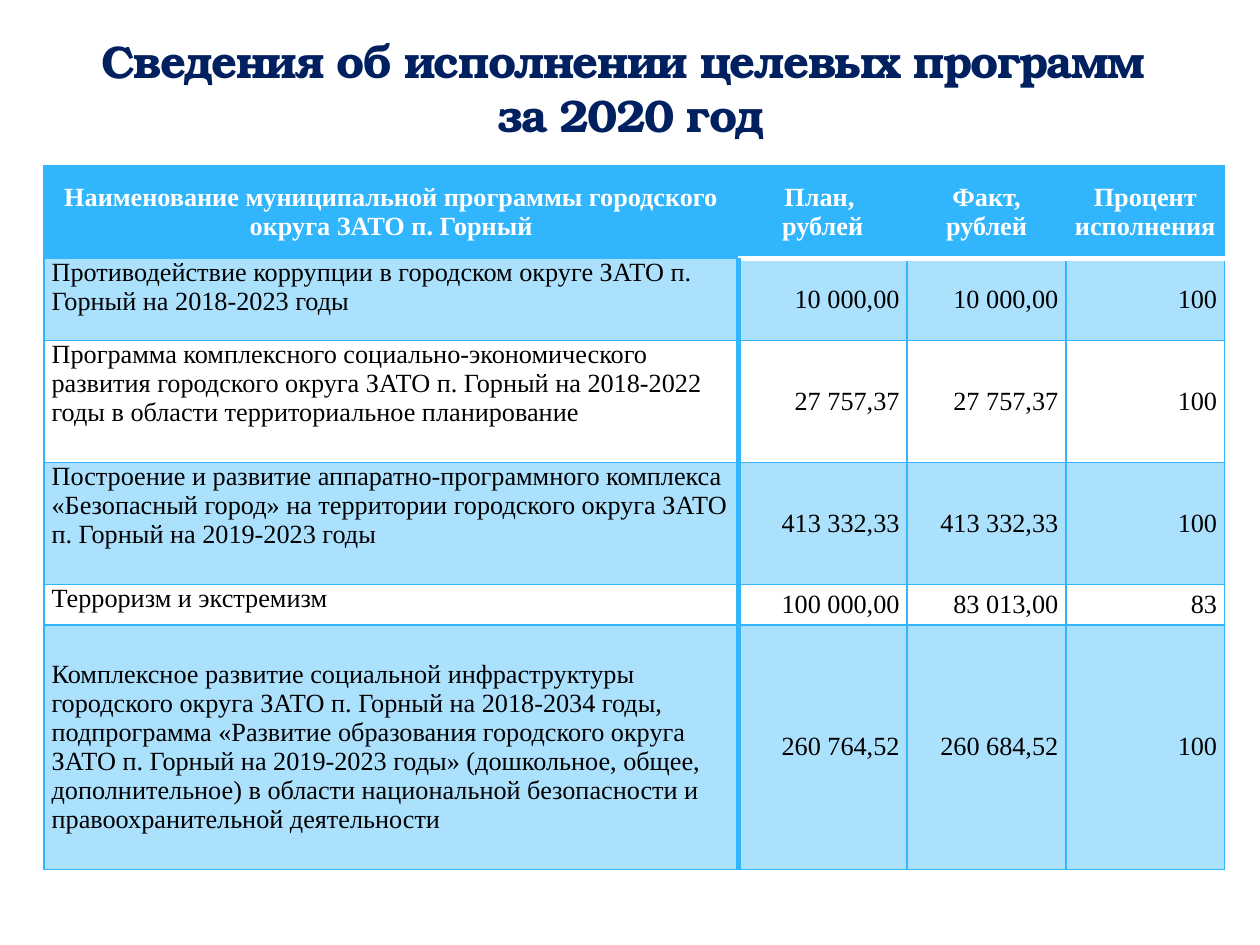
from pptx import Presentation
from pptx.util import Inches, Pt
from pptx.dml.color import RGBColor
from pptx.enum.text import PP_ALIGN, MSO_ANCHOR
from pptx.oxml.ns import qn
from lxml.etree import SubElement

HUES = {"navy": "002060", "blue": "31B6FD", "white": "FFFFFF", "black": "000000"}
WIDE, HIGH = Inches(10), Inches(7.5)

# Shares of the slide: left, top, width, height
TITLE = (0.028, 0.028, 0.945, 0.116)
GRID = (0.035, 0.175, 0.937, 0.745)
COLS = (5.51, 1.34, 1.26, 1.26)
ROWS = (0.74, 0.65, 0.97, 0.97, 0.32, 1.94)

HEAD = ("Наименование муниципальной программы городского округа ЗАТО п. Горный",
        "План, \nрублей", "Факт,\nрублей", "Процент исполнения")
BODY = (
    ("Противодействие коррупции в городском округе ЗАТО п. Горный на 2018-2023 годы",
     "10 000,00", "10 000,00", "100"),
    ("Программа комплексного социально-экономического развития городского округа "
     "ЗАТО п. Горный на 2018-2022 годы в области территориальное планирование",
     "27 757,37", "27 757,37", "100"),
    ("Построение и развитие аппаратно-программного комплекса «Безопасный город» "
     "на территории городского округа ЗАТО п. Горный на 2019-2023 годы",
     "413 332,33", "413 332,33", "100"),
    ("Терроризм и экстремизм", "100 000,00", "83 013,00", "83"),
    ("Комплексное развитие социальной инфраструктуры городского округа ЗАТО п. Горный "
     "на 2018-2034 годы, подпрограмма «Развитие образования городского округа ЗАТО "
     "п. Горный на 2019-2023 годы» (дошкольное, общее, дополнительное) в области "
     "национальной безопасности и правоохранительной деятельности",
     "260 764,52", "260 684,52", "100"),
)


def scale(box):
    return [int(part * side) for part, side in zip(box, (WIDE, HIGH) * 2)]


def assign(item, props):
    for name, value in props.items():
        setattr(item, name, value)


def write(frame, text, align, hue, **font):
    frame.text = text
    for para in frame.paragraphs:
        para.alignment = align
        for run in para.runs:
            assign(run.font, font)
            run.font.color.rgb = RGBColor.from_string(HUES[hue])


def paint(node, hue, alpha=None):
    fill = SubElement(node, qn("a:solidFill"))
    tint = SubElement(fill, qn("a:srgbClr"), val=HUES[hue])
    if alpha:
        SubElement(tint, qn("a:alpha"), val=str(alpha * 1000))


def edge(cell, **sides):
    # Borders come before the fill, in the order L, R, T, B
    props = cell._tc.get_or_add_tcPr()
    for side in "LRTB":
        hue, width = sides.get(side, ("blue", 1))
        line = SubElement(props, qn("a:ln" + side), w=str(Pt(width)))
        paint(line, hue)


def title(slide, box):
    frame = slide.shapes.add_textbox(*scale(box)).text_frame
    assign(frame, {"word_wrap": True, "vertical_anchor": MSO_ANCHOR.TOP})
    write(frame, "Сведения об исполнении целевых программ \vза 2020 год",
          PP_ALIGN.CENTER, "navy", name="TeX Gyre Bonum", size=Pt(26), bold=True)
    for run in frame.paragraphs[0].runs:
        run.font._element.set("spc", "-100")


def style(cell, row, col, text):
    top, first = row == 0, col == 0
    high = first and 0 < row < len(BODY)
    assign(cell, {"margin_left": Inches(0.06), "margin_right": Inches(0.06),
                  "margin_top": 0, "margin_bottom": 0,
                  "vertical_anchor": MSO_ANCHOR.TOP if high else MSO_ANCHOR.MIDDLE})
    align = PP_ALIGN.CENTER if top else PP_ALIGN.LEFT if first else PP_ALIGN.RIGHT
    write(cell.text_frame, text, align, "white" if top else "black",
          name="Times New Roman", size=Pt(15), bold=top)

    # White rule under the number heads, thick rule beside the names
    sides = {}
    if not first and row < 2:
        sides["B" if top else "T"] = ("white", 3)
    if not top and col < 2:
        sides["R" if first else "L"] = ("blue", 3)
    edge(cell, **sides)

    # Solid head, then tinted and clear rows in turn
    if top or row % 2:
        paint(cell._tc.tcPr, "blue", None if top else 40)
    else:
        cell.fill.background()


def grid(slide, box):
    left, top, width, height = scale(box)
    table = slide.shapes.add_table(len(ROWS), len(COLS), left, top, width, height).table
    assign(table, {"first_row": False, "horz_banding": False})
    for col, share in zip(table.columns, COLS):
        col.width = int(width * share / sum(COLS))
    for row, share in zip(table.rows, ROWS):
        row.height = int(height * share / sum(ROWS))
    for r, texts in enumerate((HEAD, *BODY)):
        for c, text in enumerate(texts):
            style(table.cell(r, c), r, c, text)


def main():
    deck = Presentation()
    assign(deck, {"slide_width": WIDE, "slide_height": HIGH})
    slide = deck.slides.add_slide(deck.slide_layouts[6])
    title(slide, TITLE)
    grid(slide, GRID)
    deck.save("out.pptx")


if __name__ == "__main__":
    main()
